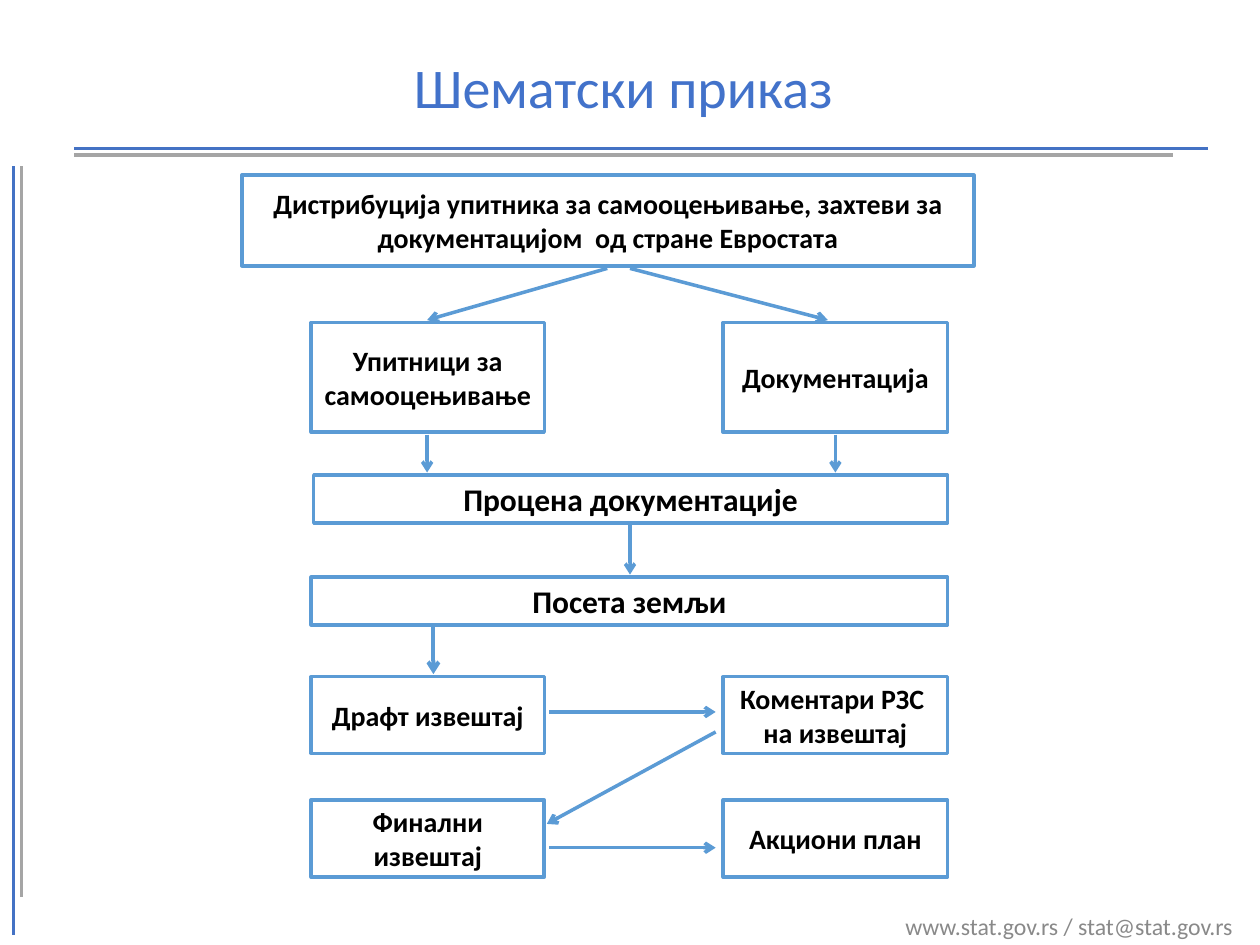
"""Build a flow chart slide of the review process, from questionnaire to action plan."""
from lxml import etree
from pptx import Presentation
from pptx import util as u
from pptx.dml.color import RGBColor
from pptx.enum import shapes, text
from pptx.oxml.ns import qn

THEME = dict(font="Calibri", blue="4472C4", gray="A5A5A5", edge="5B9BD5", fill="FFFFFF",
             ink="000000", title="4272CA", foot="898989",
             head=32, big=18, body=16, small=13.6, rule=1.75, thin=2, thick=2.25)
SIZE = (10, 7.5)
TITLE = ("Шематски приказ ", (0.25, 0.22, 9.5, 1))
FOOT = ("www.stat.gov.rs / stat@stat.gov.rs", (6.5, 7.2, 3.38, 0.3))
RULES = [
    ((0.11, 1.32), (0.11, 7.42), "blue"),
    ((0.17, 1.32), (0.17, 7.12), "gray"),
    ((0.59, 1.18), (9.59, 1.18), "blue"),
    ((0.59, 1.23), (9.31, 1.23), "gray"),
]
COLS = dict(head=(1.92, 5.81), left=(2.47, 1.85), right=(5.74, 1.78),
            inner=(2.49, 5.03), full=(2.47, 5.05))
ROWS = dict(start=(1.39, 0.72), input=(2.56, 0.87), check=(3.77, 0.38),
            visit=(4.58, 0.38), draft=(5.37, 0.61), final=(6.35, 0.61))
BOXES = [
    ("head", "start", "Дистрибуција упитника за самооцењивање, захтеви за "
     "документацијом  од стране Евростата", "body", "thin"),
    ("left", "input", "Упитници за самооцењивање", "body", "thin"),
    ("right", "input", "Документација", "body", "thick"),
    ("inner", "check", "Процена документације", "big", "thin"),
    ("full", "visit", "Посета земљи", "big", "thin"),
    ("left", "draft", "Драфт извештај", "body", "thin"),
    ("right", "draft", "Коментари РЗС \nна извештај", "body", "thin"),
    ("left", "final", "Финални извештај", "body", "thick"),
    ("right", "final", "Акциони план", "body", "thick"),
]
DOWN = [
    ("start", "input", 4.82, 3.39, "thin"),
    ("start", "input", 5, 6.57, "thin"),
    ("input", "check", 3.39, 3.39, "thin"),
    ("input", "check", 6.63, 6.63, "thin"),
    ("check", "visit", 5, 5, "thin"),
    ("visit", "draft", 3.44, 3.44, "thick"),
]
ACROSS = [("draft", 0.46), ("final", 0.62)]
BACK = (("draft", 0.72), ("final", 0.31))
GAP = 0.02


def color(name):
    return RGBColor.from_string(THEME[name])


def inches(nums):
    return [u.Inches(n) for n in nums]


def write(shape, words, size="body", ink="ink", bold=False, align="CENTER", space=1.0):
    frame = shape.text_frame
    frame.word_wrap = True
    frame.vertical_anchor = text.MSO_ANCHOR.MIDDLE
    frame.text = words
    for para in frame.paragraphs:
        para.alignment = getattr(text.PP_ALIGN, align)
        para.line_spacing = space
        for run in para.runs:
            font = run.font
            font.name, font.size, font.bold = THEME["font"], u.Pt(THEME[size]), bold
            font.color.rgb = color(ink)


def stroke(line, ink, width):
    line.color.rgb = color(ink)
    line.width = u.Pt(THEME[width])


def draw(slide, start, end, ink="edge", width="thin", arrow=True):
    link = slide.shapes.add_connector(shapes.MSO_CONNECTOR.STRAIGHT, *inches(start + end))
    stroke(link.line, ink, width)
    props = link._element.spPr
    if arrow:
        etree.SubElement(props.find(qn("a:ln")), qn("a:tailEnd"), type="arrow")
    etree.SubElement(props, qn("a:effectLst"))


def label(slide, item, **style):
    words, area = item
    write(slide.shapes.add_textbox(*inches(area)), words, **style)


def box(slide, col, row, words, size, width):
    (left, wide), (top, high) = COLS[col], ROWS[row]
    rect = slide.shapes.add_shape(shapes.MSO_SHAPE.RECTANGLE,
                                  *inches((left, top, wide, high)))
    rect.shadow.inherit = False
    rect.fill.solid()
    rect.fill.fore_color.rgb = color("fill")
    stroke(rect.line, "edge", width)
    write(rect, words, size=size, bold=True)


def level(row, share):
    top, high = ROWS[row]
    return top + high * share


def main():
    deck = Presentation()
    deck.slide_width, deck.slide_height = inches(SIZE)
    slide = deck.slides.add_slide(deck.slide_layouts[6])
    label(slide, FOOT, size="small", ink="foot", align="RIGHT")
    for start, end, ink in RULES:
        draw(slide, start, end, ink=ink, width="rule", arrow=False)
    label(slide, TITLE, size="head", ink="title", space=0.9)
    for item in BOXES:
        box(slide, *item)
    for high, low, near, far, width in DOWN:
        draw(slide, (near, level(high, 1) + GAP), (far, level(low, 0) - GAP), width=width)
    west, east = sum(COLS["left"]) + GAP, COLS["right"][0] - 3 * GAP
    for row, share in ACROSS:
        draw(slide, (west + GAP, level(row, share)), (east, level(row, share)))
    draw(slide, (east, level(*BACK[0])), (west, level(*BACK[1])))
    deck.save("out.pptx")


if __name__ == "__main__":
    main()
